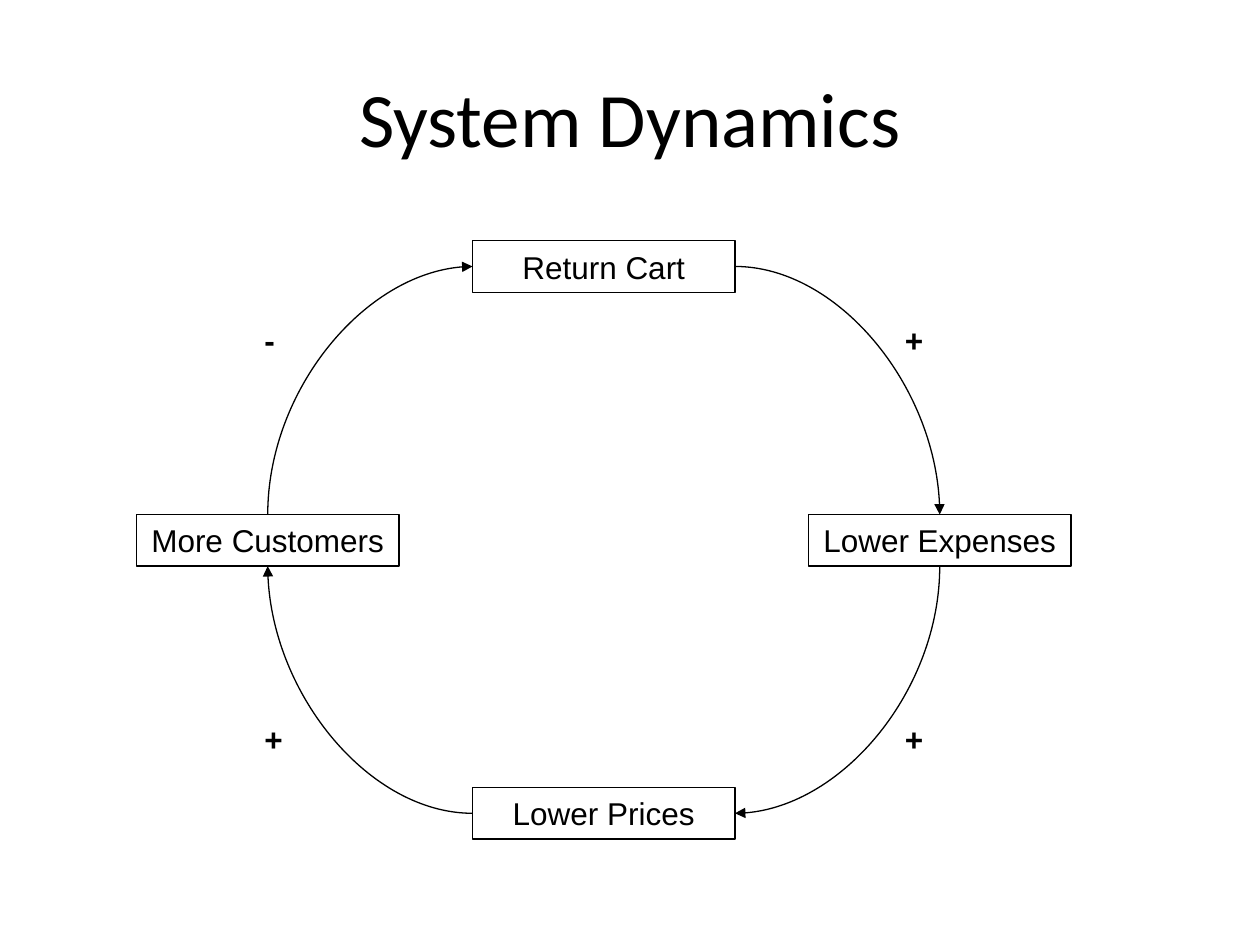
from dataclasses import dataclass

from lxml import etree
from pptx import Presentation
from pptx.dml.color import RGBColor
from pptx.enum.shapes import MSO_CONNECTOR, MSO_SHAPE
from pptx.enum.text import MSO_ANCHOR, PP_ALIGN
from pptx.oxml.ns import qn
from pptx.util import Pt

CURVE = MSO_CONNECTOR.CURVE
RECT = MSO_SHAPE.RECTANGLE
MIDDLE = MSO_ANCHOR.MIDDLE
CENTER, LEFT = PP_ALIGN.CENTER, PP_ALIGN.LEFT
BLACK = "000000"
BOX_W, BOX_H = 150, 29.5
LINE_W = 0.75


@dataclass
class Stage:
    text: str
    x: float
    y: float


@dataclass
class Sign:
    text: str
    x: float
    y: float
    w: float


STAGES = [
    Stage("Return Cart", 270, 137.5),
    Stage("Lower Expenses", 462, 294),
    Stage("Lower Prices", 270, 450),
    Stage("More Customers", 78, 294),
]
SIGNS = [
    Sign("+", 510, 180, 25),
    Sign("+", 510, 408, 25),
    Sign("+", 144, 408, 25),
    Sign("-", 144, 180, 20),
]


def rgb(value: str) -> RGBColor:
    return RGBColor.from_string(value)


def write(sp, text: str, size: float, font: str = "Arial",
          align=LEFT, bold: bool = False) -> None:
    tf = sp.text_frame
    tf.text = text
    tf.vertical_anchor = MIDDLE
    p = tf.paragraphs[0]
    p.alignment = align
    f = p.runs[0].font
    f.name, f.size, f.bold = font, Pt(size), bold
    f.color.rgb = rgb(BLACK)


def draw_title(s, text: str) -> None:
    sp = s.shapes.add_textbox(Pt(36), Pt(21.6), Pt(648), Pt(90))
    sp.text_frame.word_wrap = True
    write(sp, text, 44, "Calibri", CENTER)


def draw_stage(s, stage: Stage):
    sp = s.shapes.add_shape(RECT, Pt(stage.x), Pt(stage.y), Pt(BOX_W), Pt(BOX_H))
    sp.shadow.inherit = False
    sp.fill.background()
    sp.line.color.rgb = rgb(BLACK)
    sp.line.width = Pt(LINE_W)
    write(sp, stage.text, 18, align=CENTER)
    return sp


def draw_sign(s, sign: Sign) -> None:
    sp = s.shapes.add_textbox(Pt(sign.x), Pt(sign.y), Pt(sign.w), Pt(29))
    sp.text_frame.word_wrap = False
    write(sp, sign.text, 18, bold=True)


def draw_arc(s, start, end, quarter: int) -> None:
    cxn = s.shapes.add_connector(CURVE, 0, 0, 0, 0)
    cxn.begin_connect(start, 3 - quarter)
    cxn.end_connect(end, (4 - quarter) % 4)
    mid_x = (cxn.begin_x + cxn.end_x) // 2
    mid_y = (cxn.begin_y + cxn.end_y) // 2
    w, h = cxn.width, cxn.height
    if quarter % 2:
        w, h = h, w
    cxn.left, cxn.top = mid_x - w // 2, mid_y - h // 2
    cxn.width, cxn.height = w, h
    cxn.line.color.rgb = rgb(BLACK)
    cxn.line.width = Pt(LINE_W)

    spPr = cxn._element.spPr
    xfrm = spPr.find(qn("a:xfrm"))
    for flip in ("flipH", "flipV"):
        xfrm.attrib.pop(flip, None)
    xfrm.set("rot", str(quarter * 90 * 60000))
    spPr.find(qn("a:prstGeom")).set("prst", "curvedConnector2")
    etree.SubElement(spPr.find(qn("a:ln")), qn("a:tailEnd"), type="triangle")
    etree.SubElement(spPr, qn("a:effectLst"))


def main() -> None:
    prs = Presentation()
    prs.slide_width, prs.slide_height = Pt(720), Pt(540)
    s = prs.slides.add_slide(prs.slide_layouts[6])
    draw_title(s, "System Dynamics")
    boxes = [draw_stage(s, stage) for stage in STAGES]
    for i, box in enumerate(boxes):
        draw_arc(s, box, boxes[(i + 1) % len(boxes)], i)
    for sign in SIGNS:
        draw_sign(s, sign)
    prs.save("out.pptx")


if __name__ == "__main__":
    main()
